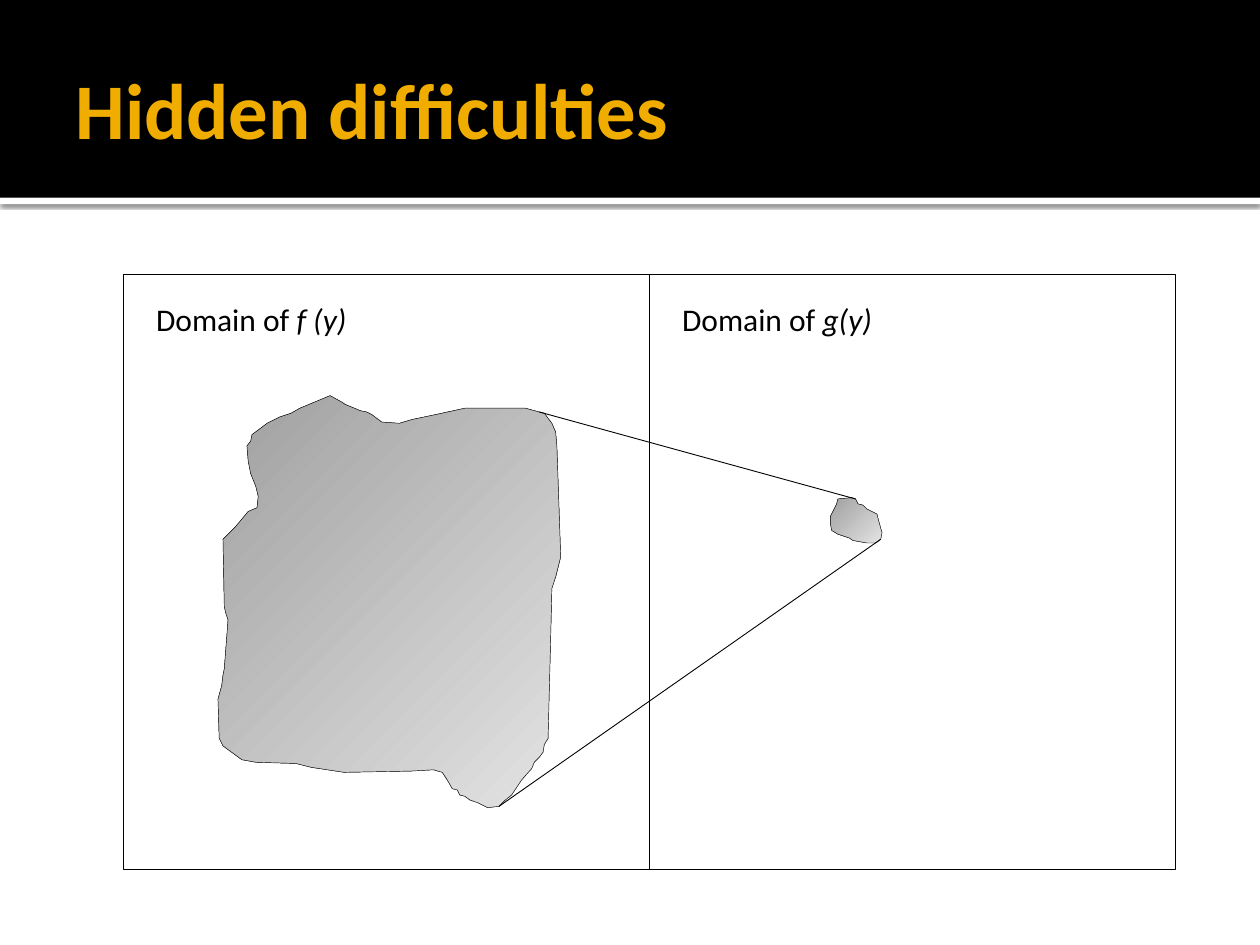
from collections import namedtuple
from dataclasses import dataclass

from lxml import etree
from pptx import Presentation
from pptx.dml.color import RGBColor
from pptx.enum.shapes import MSO_CONNECTOR, MSO_SHAPE
from pptx.enum.text import MSO_ANCHOR, PP_ALIGN
from pptx.oxml.ns import qn
from pptx.util import Pt

RECT = MSO_SHAPE.RECTANGLE
STRAIGHT = MSO_CONNECTOR.STRAIGHT
MIDDLE = MSO_ANCHOR.MIDDLE
LEFT = PP_ALIGN.LEFT

SCALE = 9144
Box = namedtuple("Box", "x y w h")


@dataclass(frozen=True)
class Theme:
    font: str = "Calibri"
    black: str = "000000"
    white: str = "FFFFFF"
    gold: str = "F0AD00"
    dark: str = "A0A0A0"
    light: str = "E3E3E3"
    head: int = 45
    body: int = 18
    thin: float = 0.25
    line: float = 0.5


THEME = Theme()

LARGE = [
    (89, 0), (65, 10), (58, 14), (49, 17), (39, 22), (27, 31), (26, 36),
    (23, 40), (24, 52), (26, 62), (28, 67), (30, 72), (32, 80), (31, 89),
    (24, 92), (14, 104), (10, 108), (4, 114), (5, 167), (6, 172), (8, 178),
    (5, 217), (4, 222), (3, 230), (0, 241), (1, 272), (4, 278), (19, 289),
    (30, 291), (62, 292), (74, 295), (100, 299), (153, 298), (171, 297),
    (178, 299), (182, 305), (186, 312), (190, 313), (192, 317), (196, 318),
    (200, 321), (206, 323), (214, 327), (223, 326), (228, 321), (233, 317),
    (241, 305), (249, 296), (251, 291), (255, 287), (258, 283), (259, 277),
    (262, 272), (264, 195), (265, 153), (268, 144), (272, 128), (269, 40),
    (268, 29), (265, 22), (262, 18), (259, 14), (255, 13), (244, 10),
    (220, 10), (196, 10), (173, 15), (154, 19), (144, 22), (130, 21),
    (122, 15), (118, 13), (113, 12), (101, 7), (98, 5),
]
SMALL = [
    (17, 0), (6, 1), (5, 5), (3, 9), (0, 15), (0, 20), (1, 26), (6, 29),
    (15, 32), (18, 34), (29, 36), (36, 36), (40, 33), (41, 28), (38, 17),
    (37, 13), (29, 9), (26, 6), (22, 5), (20, 1),
]
RAYS = [((255, 13), (20, 1)), ((223, 326), (40, 33))]


def px(*nums):
    return [round(n * SCALE) for n in nums]


def color(code):
    return RGBColor.from_string(code)


def stroke(line, width):
    line.color.rgb = color(THEME.black)
    line.width = Pt(width)


def write(para, text, size, tone, bold=False, slant=False):
    run = para.add_run()
    run.text = text
    font = run.font
    font.name, font.size = THEME.font, Pt(size)
    font.bold, font.italic = bold, slant
    font.color.rgb = color(tone)


def block(slide, box, tone):
    shape = slide.shapes.add_shape(RECT, *px(*box))
    shape.shadow.inherit = False
    shape.fill.solid()
    shape.fill.fore_color.rgb = color(tone)
    shape.line.fill.background()
    return shape


def shade(shape):
    effect = shape._element.spPr.find(qn("a:effectLst"))
    outer = etree.SubElement(effect, qn("a:outerShdw"), blurRad=str(Pt(2.5)),
                             dist=str(Pt(0.8)), dir="5400000", algn="tl",
                             rotWithShape="0")
    tone = etree.SubElement(outer, qn("a:srgbClr"), val=THEME.black)
    etree.SubElement(tone, qn("a:alpha"), val="60000")


def header(slide, box, text):
    shade(block(slide, Box(box.x, box.y + box.h, box.w, 5), THEME.white))
    block(slide, box, THEME.black)
    title = slide.shapes.title
    slide.shapes._spTree.append(title._element)
    title.left, title.top, title.width, title.height = px(
        box.x + 50, box.y + 17, box.w - 100, box.h - 20)
    frame = title.text_frame
    frame.vertical_anchor = MIDDLE
    frame.margin_left, frame.margin_right = px(10, 5)
    frame.margin_top, frame.margin_bottom = px(5, 5)
    para = frame.paragraphs[0]
    para.alignment = LEFT
    write(para, text, THEME.head, THEME.gold, bold=True)


def rule(slide, start, end):
    line = slide.shapes.add_connector(STRAIGHT, *px(*start, *end))
    stroke(line.line, THEME.line)
    etree.SubElement(line._element.spPr, qn("a:effectLst"))


def label(slide, box, name):
    frame = slide.shapes.add_textbox(
        *px(box.x + 16, box.y + 15, 175, 40)).text_frame
    frame.word_wrap = True
    para = frame.paragraphs[0]
    write(para, "Domain of ", THEME.body, THEME.black)
    write(para, name, THEME.body, THEME.black, slant=True)


def panels(slide, box, names):
    shape = slide.shapes.add_shape(RECT, *px(*box))
    shape.shadow.inherit = False
    shape.fill.background()
    stroke(shape.line, THEME.thin)
    half = box.w / len(names)
    mid = box.x + half
    rule(slide, (mid, box.y), (mid, box.y + box.h))
    for i, name in enumerate(names):
        label(slide, Box(box.x + i * half, box.y, half, box.h), name)


def blob(slide, spot, points):
    path = slide.shapes.build_freeform(*points[0], scale=SCALE)
    path.add_line_segments(points[1:], close=True)
    shape = path.convert_to_shape(*px(*spot))
    shape.shadow.inherit = False
    shape.fill.gradient()
    shape.fill.gradient_angle = 315
    for stop, place, tone in zip(shape.fill.gradient_stops, (0, 1),
                                 (THEME.dark, THEME.light)):
        stop.color.rgb = color(tone)
        stop.position = place
    stroke(shape.line, THEME.thin)


def domains(slide, box):
    large = box.x + 75, box.y + 96
    small = box.x + 561, box.y + 177
    blob(slide, large, LARGE)
    blob(slide, small, SMALL)
    for start, end in RAYS:
        rule(slide, (large[0] + start[0], large[1] + start[1]),
             (small[0] + end[0], small[1] + end[1]))


def main():
    prs = Presentation()
    prs.slide_width, prs.slide_height = px(1000, 750)
    slide = prs.slides.add_slide(prs.slide_layouts[5])
    header(slide, Box(0, 0, 1000, 157), "Hidden difficulties")
    area = Box(98, 218, 835, 472)
    panels(slide, area, ["f (y)", "g(y)"])
    domains(slide, area)
    prs.save("out.pptx")


if __name__ == "__main__":
    main()
